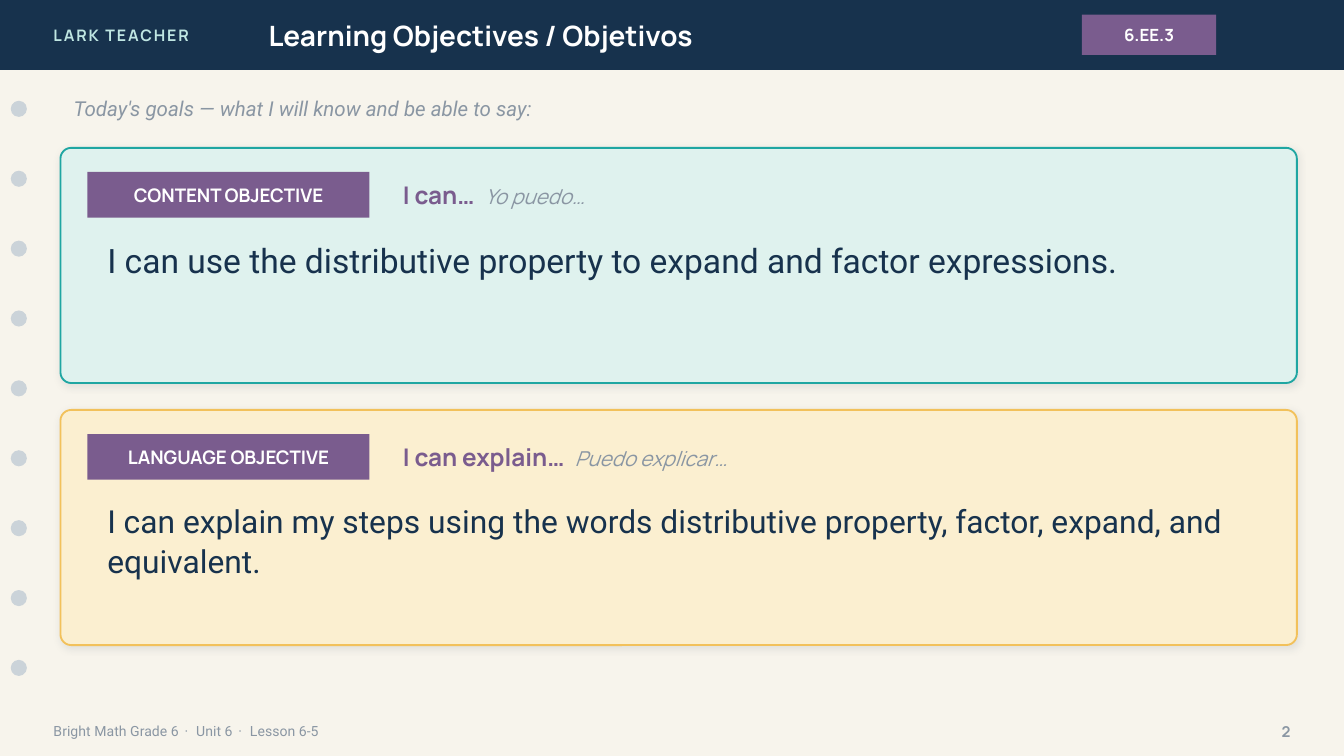
from dataclasses import dataclass, replace

import pptx
import pptx.dml.color
import pptx.enum.shapes
import pptx.enum.text
import pptx.oxml
import pptx.oxml.ns
import pptx.util

RGBColor = pptx.dml.color.RGBColor
Shapes = pptx.enum.shapes.MSO_SHAPE
Align = pptx.enum.text.PP_ALIGN
Anchor = pptx.enum.text.MSO_ANCHOR

CREAM = RGBColor(0xF7, 0xF4, 0xEC)
NAVY = RGBColor(0x17, 0x32, 0x4D)
WHITE = RGBColor(0xFF, 0xFF, 0xFF)
MINT = RGBColor(0xBF, 0xE6, 0xE2)
PURPLE = RGBColor(0x7A, 0x5C, 0x8E)
GREY = RGBColor(0x8A, 0x96, 0xA3)
HOLE_GREY = RGBColor(0xCB, 0xD3, 0xD9)
PALE_TEAL = RGBColor(0xDF, 0xF2, 0xEE)
TEAL = RGBColor(0x1F, 0xA6, 0xA2)
PALE_GOLD = RGBColor(0xFB, 0xEF, 0xD0)
GOLD = RGBColor(0xF2, 0xC1, 0x5B)

# The grid has 100 columns across the slide; rows are as high as columns are wide.
COLUMNS = 100
SLIDE_WIDTH = pptx.util.Inches(10)
CELL = SLIDE_WIDTH // COLUMNS
BAR_ROWS = 5.2

CARD_SHADOW = (
    f'<a:effectLst {pptx.oxml.ns.nsdecls("a")}>'
    '<a:outerShdw blurRad="50800" dist="12700" dir="5400000" algn="bl" rotWithShape="0">'
    '<a:srgbClr val="1C2E42"><a:alpha val="10000"/></a:srgbClr>'
    '</a:outerShdw></a:effectLst>'
)


@dataclass(frozen=True)
class Area:
    """A place on the grid, in columns and rows."""
    column: float
    row: float
    columns: float
    rows: float

    def emu(self) -> list[int]:
        return [round(n * CELL) for n in (self.column, self.row, self.columns, self.rows)]


@dataclass(frozen=True)
class Words:
    """One run of text; tracking is extra letter spacing in points."""
    text: str
    size: float
    color: RGBColor
    font: str = "Manrope"
    bold: bool = False
    italic: bool = False
    tracking: float = 0


@dataclass(frozen=True)
class Objective:
    row: float
    label: str
    starter: str
    starter_es: str
    statement: str
    statement_size: float
    fill: RGBColor
    border: RGBColor


OBJECTIVES = [
    Objective(11, "CONTENT OBJECTIVE", "I can…", "Yo puedo…",
              "I can use the distributive property to expand and factor expressions.",
              18, PALE_TEAL, TEAL),
    Objective(30.5, "LANGUAGE OBJECTIVE", "I can explain…", "Puedo explicar…",
              "I can explain my steps using the words distributive property, factor, "
              "expand, and equivalent.",
              17, PALE_GOLD, GOLD),
]


def write(frame, runs: list[Words], align=Align.LEFT, anchor=Anchor.MIDDLE,
          line_spacing: float | None = None) -> None:
    frame.word_wrap = True
    frame.vertical_anchor = anchor
    paragraph = frame.paragraphs[0]
    paragraph.alignment = align
    paragraph.line_spacing = line_spacing
    for words in runs:
        run = paragraph.add_run()
        run.text = words.text
        run.font.name = words.font
        run.font.size = pptx.util.Pt(words.size)
        run.font.color.rgb = words.color
        run.font.bold = words.bold
        run.font.italic = words.italic
        if words.tracking:
            run.font._element.set("spc", str(round(words.tracking * 100)))


def add_text(slide, area: Area, runs: list[Words], **layout) -> None:
    write(slide.shapes.add_textbox(*area.emu()).text_frame, runs, **layout)


def add_block(slide, kind, area: Area, fill: RGBColor):
    block = slide.shapes.add_shape(kind, *area.emu())
    block.shadow.inherit = False
    block.fill.solid()
    block.fill.fore_color.rgb = fill
    block.line.fill.background()
    return block


def add_tag(slide, area: Area, label: str, size: float) -> None:
    tag = add_block(slide, Shapes.RECTANGLE, area, PURPLE)
    write(tag.text_frame, [Words(label, size, WHITE, bold=True)], align=Align.CENTER)


def add_header(slide) -> None:
    add_block(slide, Shapes.RECTANGLE, Area(0, 0, COLUMNS, BAR_ROWS), NAVY)
    add_text(slide, Area(3, 0, 24, BAR_ROWS),
             [Words("LARK TEACHER", 8.5, MINT, bold=True, tracking=1)])
    add_text(slide, Area(19, 0, 56, BAR_ROWS),
             [Words("Learning Objectives / Objetivos", 15, WHITE, bold=True)])
    add_tag(slide, Area(80.5, 1.1, 10, 3), "6.EE.3", 9)


def add_binder_holes(slide) -> None:
    for index in range(9):
        add_block(slide, Shapes.OVAL, Area(0.8, 7.5 + 5.2 * index, 1.2, 1.2), HOLE_GREY)


def add_footer(slide) -> None:
    part = Words("Bright Math Grade 6", 7.5, GREY, font="Roboto")
    dot = replace(part, text=" · ", tracking=1.2)
    add_text(slide, Area(3, 53, 70, 2.8),
             [part, dot, replace(part, text="Unit 6"), dot, replace(part, text="Lesson 6-5")])
    add_text(slide, Area(92, 53, 5, 2.8), [Words("2", 8, GREY, bold=True)], align=Align.RIGHT)


def add_objective(slide, objective: Objective) -> None:
    top = objective.row
    card = add_block(slide, Shapes.ROUNDED_RECTANGLE, Area(4.5, top, 92, 17.5), objective.fill)
    card.adjustments[0] = 0.046
    card.line.color.rgb = objective.border
    card.line.width = pptx.util.Pt(1)
    effects = card._element.spPr.find(pptx.oxml.ns.qn("a:effectLst"))
    effects.getparent().replace(effects, pptx.oxml.parse_xml(CARD_SHADOW))

    add_tag(slide, Area(6.5, top + 1.8, 21, 3.4), objective.label, 10)
    starter = Words(objective.starter, 13, PURPLE, bold=True)
    add_text(slide, Area(29, top + 1.8, 66, 3.4), [
        starter,
        replace(starter, text=" ", tracking=3),
        Words(objective.starter_es, 11, GREY, italic=True),
    ])
    add_text(slide, Area(7, top + 6.2, 87, 10),
             [Words(objective.statement, objective.statement_size, NAVY, font="Roboto")],
             anchor=Anchor.TOP, line_spacing=1.05)


def main() -> None:
    deck = pptx.Presentation()
    deck.slide_width = SLIDE_WIDTH
    deck.slide_height = SLIDE_WIDTH * 9 // 16
    slide = deck.slides.add_slide(deck.slide_layouts[6])
    slide.background.fill.solid()
    slide.background.fill.fore_color.rgb = CREAM

    add_header(slide)
    add_binder_holes(slide)
    add_footer(slide)
    add_text(slide, Area(4.5, 6.6, 92, 3),
             [Words("Today's goals — what I will know and be able to say:", 11, GREY,
                    font="Roboto", italic=True)])
    for objective in OBJECTIVES:
        add_objective(slide, objective)
    deck.save("out.pptx")


if __name__ == "__main__":
    main()
